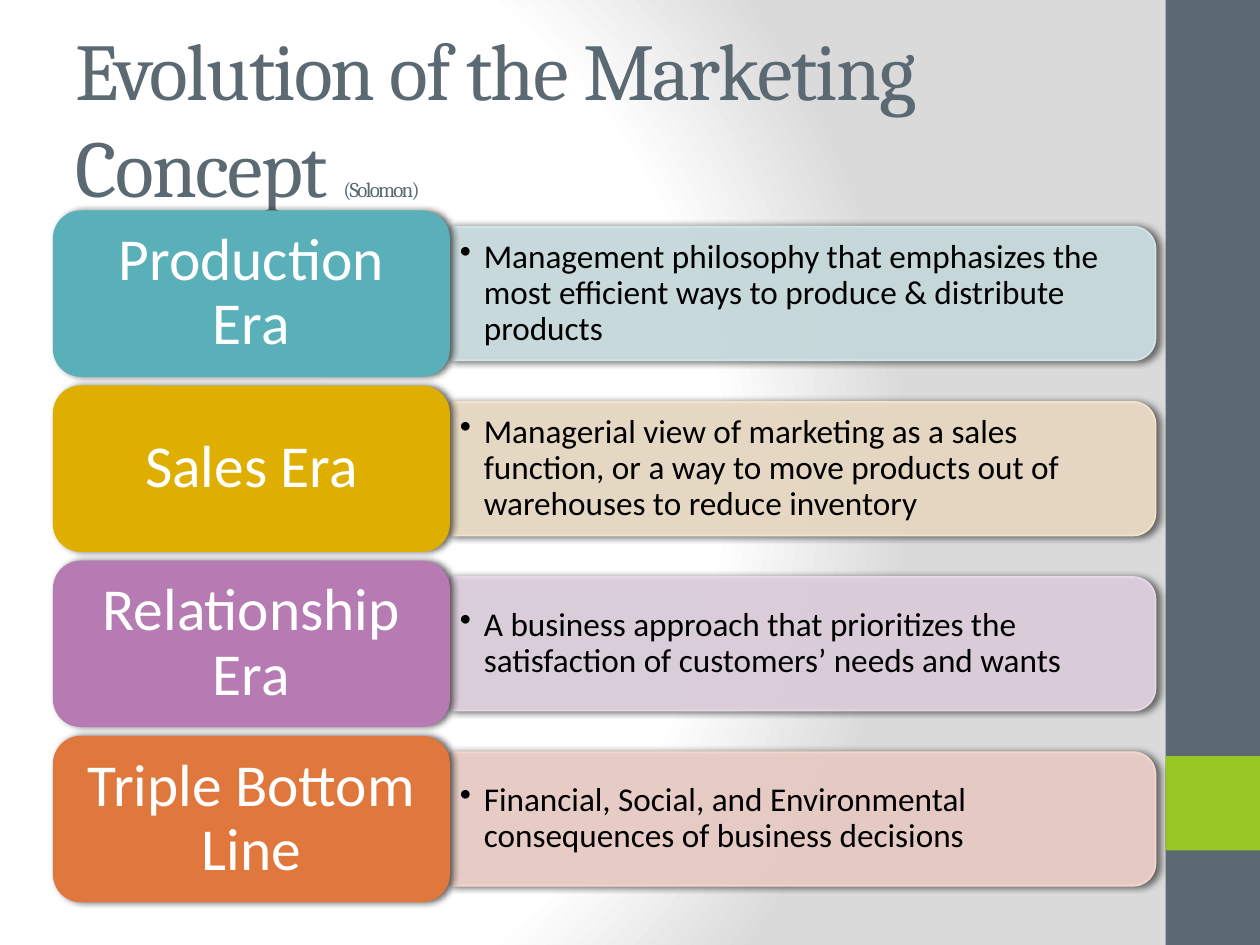
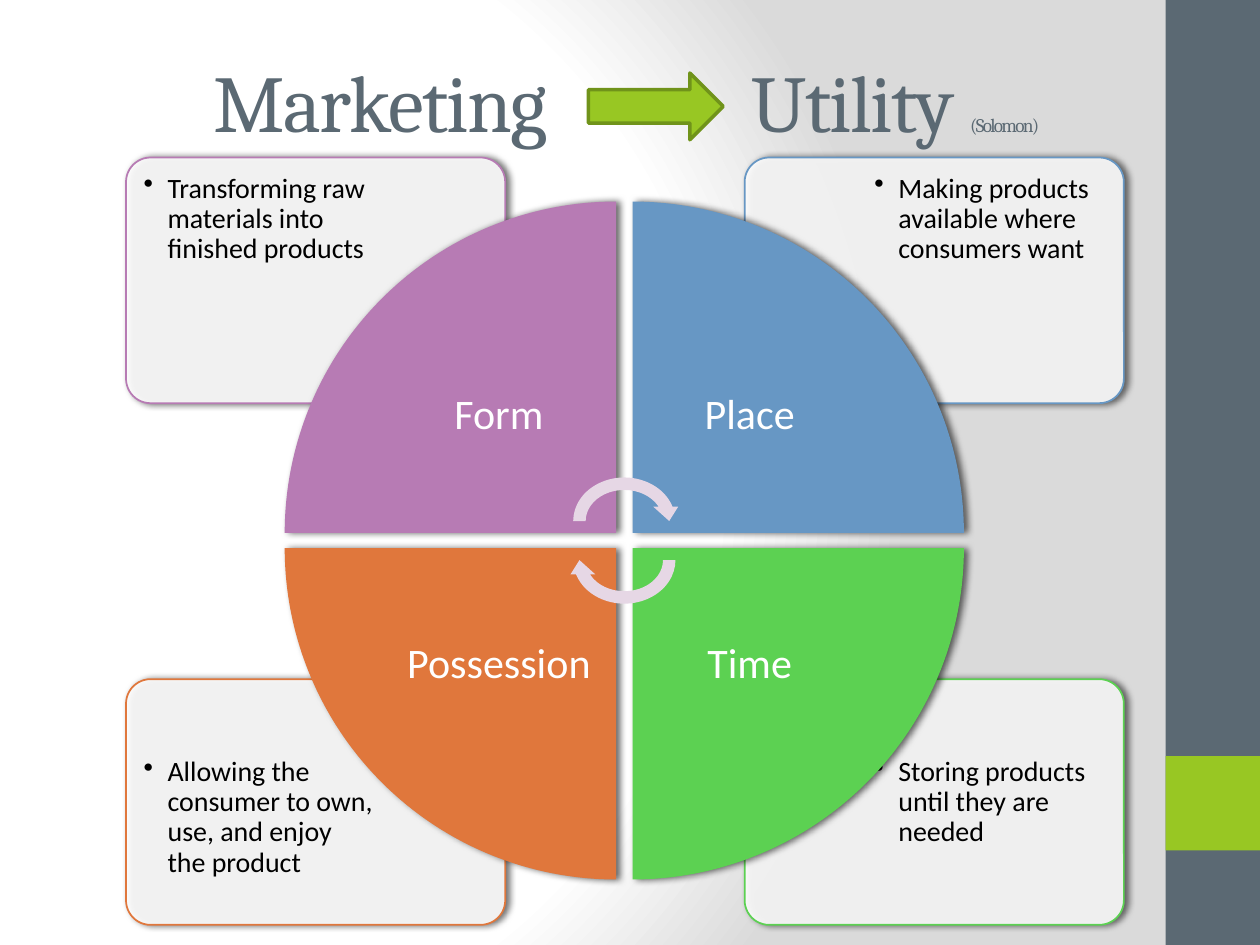
from lxml.etree import SubElement
from pptx import Presentation
from pptx.dml.color import RGBColor
from pptx.enum.shapes import MSO_SHAPE as SHAPE
from pptx.enum.text import MSO_ANCHOR as ANCHOR, PP_ALIGN as ALIGN
from pptx.oxml import parse_xml
from pptx.oxml.ns import nsdecls, qn
from pptx.util import Inches, Pt

SLATE = RGBColor(0x5B, 0x69, 0x73)
LIME = RGBColor(0x98, 0xC7, 0x23)
DARK_LIME = RGBColor(0x70, 0x93, 0x1A)
TEAL = RGBColor(0x59, 0xB0, 0xB9)
GOLD = RGBColor(0xDE, 0xAE, 0x00)
PURPLE = RGBColor(0xB7, 0x7B, 0xB4)
ORANGE = RGBColor(0xE0, 0x77, 0x3C)
BLUE = RGBColor(0x67, 0x97, 0xC4)
GREEN = RGBColor(0x5C, 0xD1, 0x52)
PALE_TEAL = RGBColor(0xD1, 0xE4, 0xE6)
PALE_GOLD = RGBColor(0xF2, 0xE3, 0xCC)
PALE_PURPLE = RGBColor(0xE6, 0xD7, 0xE5)
PALE_ORANGE = RGBColor(0xF3, 0xD6, 0xCE)
WHITE = RGBColor(0xFF, 0xFF, 0xFF)
BLACK = RGBColor(0x00, 0x00, 0x00)

BACKGROUND = f"""<p:bg {nsdecls("p", "a")}><p:bgPr><a:gradFill rotWithShape="1"><a:gsLst>
<a:gs pos="0"><a:srgbClr val="FFFFFF"/></a:gs>
<a:gs pos="75000"><a:srgbClr val="FFFFFF"/></a:gs>
<a:gs pos="100000"><a:srgbClr val="DADADA"/></a:gs></a:gsLst>
<a:path path="circle"><a:fillToRect l="20000" t="50000" r="100000" b="50000"/></a:path>
</a:gradFill><a:effectLst/></p:bgPr></p:bg>"""

ERAS = [
    ("Production Era", TEAL, PALE_TEAL,
     "Management philosophy that emphasizes the most efficient ways to produce & distribute products"),
    ("Sales Era", GOLD, PALE_GOLD,
     "Managerial view of marketing as a sales function, or a way to move products out of "
     "warehouses to reduce inventory"),
    ("Relationship Era", PURPLE, PALE_PURPLE,
     "A business approach that prioritizes the satisfaction of customers’ needs and wants"),
    ("Triple Bottom Line", ORANGE, PALE_ORANGE,
     "Financial, Social, and Environmental consequences of business decisions"),
]

UTILITIES = [
    ("Form", PURPLE, 0, 0, "Transforming raw materials into finished products"),
    ("Place", BLUE, 1, 0, "Making products available where consumers want"),
    ("Time", GREEN, 1, 1, "Storing products until they are needed"),
    ("Possession", ORANGE, 0, 1, "Allowing the consumer to own, use, and enjoy the product"),
]


class Deck:
    heading_font = "Cambria"
    body_font = "Calibri"

    def __init__(self):
        self.prs = Presentation()
        self.prs.slide_width, self.prs.slide_height = Inches(10), Inches(7.5)
        self.s = None

    def slide(self):
        self.s = self.prs.slides.add_slide(self.prs.slide_layouts[6])
        self.s.element.cSld.insert(0, parse_xml(BACKGROUND))
        self.shape(SHAPE.RECTANGLE, 9.25, 0, 0.75, 7.5, SLATE)
        self.shape(SHAPE.RECTANGLE, 9.25, 6, 0.75, 0.75, LIME)

    def shape(self, kind, x, y, w, h, fill, line=None, width=1, rotation=0,
              shadow=False, alpha=None):
        sp = self.s.shapes.add_shape(kind, Inches(x), Inches(y), Inches(w), Inches(h))
        sp.rotation = rotation
        sp.fill.solid()
        sp.fill.fore_color.rgb = fill
        spPr = sp.element.spPr
        if alpha:
            color = spPr.find(qn("a:solidFill")).find(qn("a:srgbClr"))
            SubElement(color, qn("a:alpha"), val=str(alpha * 1000))
        if line is None:
            sp.line.fill.background()
        else:
            sp.line.color.rgb = line
            sp.line.width = Pt(width)
        sp.shadow.inherit = False
        if shadow:
            outer = SubElement(spPr.find(qn("a:effectLst")), qn("a:outerShdw"),
                               blurRad=str(Pt(4)), dist=str(Pt(2)), dir="0", rotWithShape="0")
            color = SubElement(outer, qn("a:srgbClr"), val="000000")
            SubElement(color, qn("a:alpha"), val="60000")
        return sp

    def frame(self, sp, inset_x, inset_y, anchor):
        tf = sp.text_frame
        tf.word_wrap = True
        tf.margin_left = tf.margin_right = Inches(inset_x)
        tf.margin_top = tf.margin_bottom = Inches(inset_y)
        tf.vertical_anchor = anchor
        return tf

    def box(self, x, y, w, h):
        return self.s.shapes.add_textbox(Inches(x), Inches(y), Inches(w), Inches(h))

    def font(self, r, name, size, color):
        r.font.name, r.font.size, r.font.color.rgb = name, Pt(size), color

    def title(self, text, source, source_size, x, y, w, h, tab=None):
        p = self.frame(self.box(x, y, w, h), 0.1, 0.05, ANCHOR.MIDDLE).paragraphs[0]
        p.alignment = ALIGN.LEFT
        if tab:
            tabs = SubElement(p._p.get_or_add_pPr(), qn("a:tabLst"))
            SubElement(tabs, qn("a:tab"), pos=str(Inches(tab)), algn="l")
        for words, size in ((text + " ", 46), (source, source_size)):
            r = p.add_run()
            r.text = words
            self.font(r, self.heading_font, size, SLATE)
            r.font._element.set("spc", "-100")

    def label(self, sp, text, size, inset_x, inset_y):
        p = self.frame(sp, inset_x, inset_y, ANCHOR.MIDDLE).paragraphs[0]
        p.text = text
        p.alignment = ALIGN.CENTER
        p.line_spacing = 0.9
        self.font(p.runs[0], self.body_font, size, WHITE)

    def bullet(self, text, size, x, y, w, h, inset_x, inset_y, anchor):
        p = self.frame(self.box(x, y, w, h), inset_x, inset_y, anchor).paragraphs[0]
        p.text = text
        p.alignment = ALIGN.LEFT
        p.line_spacing = 0.9
        pPr = p._p.get_or_add_pPr()
        pPr.set("marL", str(Inches(0.19)))
        pPr.set("indent", str(Inches(-0.19)))
        SubElement(pPr, qn("a:buChar"), char="•")
        self.font(p.runs[0], self.body_font, size, BLACK)


def evolution_slide(deck):
    deck.slide()
    deck.title("Evolution of the Marketing Concept", "(Solomon)", 12, 0.5, 0.3, 8.33, 1.25)
    band_w, band_h = 5.6, 1.06
    for i, (era, color, pale, meaning) in enumerate(ERAS):
        y = 1.67 + 1.39 * i
        middle = y + 0.66
        deck.shape(SHAPE.ROUND_2_SAME_RECTANGLE, 3.57 + (band_w - band_h) / 2, middle - band_w / 2,
                   band_h, band_w, pale, line=pale, rotation=90, shadow=True, alpha=90)
        deck.bullet(meaning, 19, 3.57, middle - 0.48, 5.55, 0.96, 0.08, 0.04, ANCHOR.MIDDLE)
        sp = deck.shape(SHAPE.ROUNDED_RECTANGLE, 0.42, y, 3.15, 1.32, color, shadow=True)
        deck.label(sp, era, 34, 0.14, 0.07)


def utility_slide(deck):
    deck.slide()
    deck.title("Marketing\tUtility", "(Solomon)", 11, 1.6, 0.25, 7.6, 1.09, tab=4.27)
    for _, color, col, row, meaning in reversed(UTILITIES):
        sp = deck.shape(SHAPE.ROUNDED_RECTANGLE, 1 + 4.91 * col, 1.25 + 4.14 * row, 3.01, 1.95,
                        WHITE, line=color, shadow=True, alpha=90)
        sp.adjustments[0] = 0.1
        deck.bullet(meaning, 16, 1.05 + 5.8 * col, 1.29 + 4.63 * row, 2.02, 1.37,
                    0.09, 0.09, ANCHOR.TOP)
    for i, (utility, color, col, row, _) in enumerate(UTILITIES):
        deck.shape(SHAPE.PIE_WEDGE, 2.26 + 2.76 * col, 1.6 + 2.75 * row, 2.63, 2.63,
                   color, rotation=90 * i, shadow=True)
        deck.label(deck.box(3.03 + 1.99 * col, 2.37 + 1.98 * row, 1.86, 1.86),
                   utility, 24, 0.19, 0.19)
    for y, rotation in ((3.74, 0), (4.05, 180)):
        deck.shape(SHAPE.CIRCULAR_ARROW, 4.5, y, 0.91, 0.79, PALE_PURPLE, rotation=rotation)
    deck.shape(SHAPE.RIGHT_ARROW, 4.67, 0.58, 1.07, 0.53, LIME, line=DARK_LIME, width=2)


def main():
    deck = Deck()
    evolution_slide(deck)
    utility_slide(deck)
    deck.prs.save("out.pptx")


if __name__ == "__main__":
    main()
